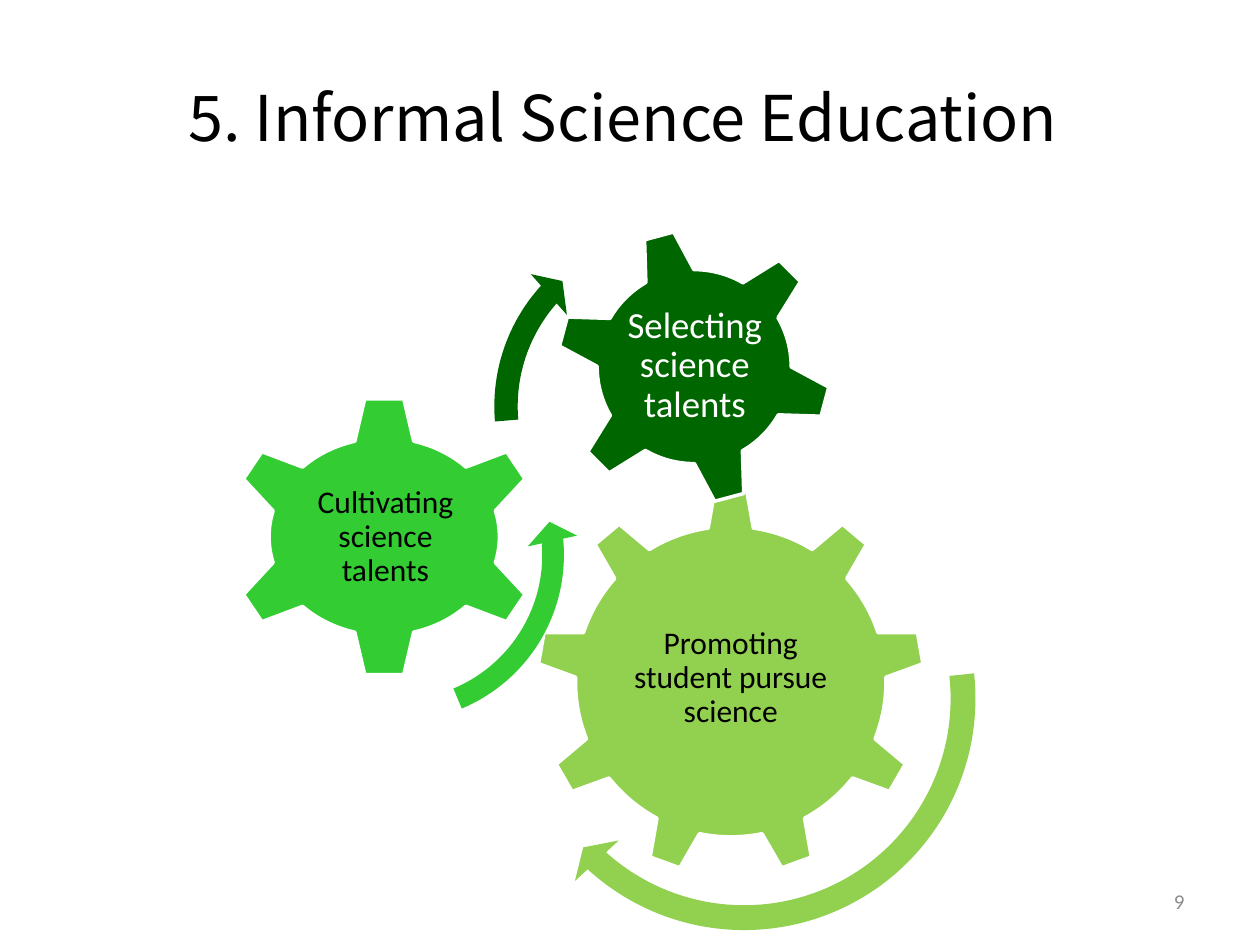
"""Build a title slide with three turning gears and their circular arrows."""
from dataclasses import dataclass

import pptx
import pptx.dml.color
import pptx.enum.shapes
import pptx.enum.text
import pptx.util

SHAPE = pptx.enum.shapes.MSO_SHAPE
ALIGN = pptx.enum.text.PP_ALIGN


@dataclass(frozen=True)
class Theme:
    """Colours, fonts and type sizes of the deck."""
    black: str = "000000"
    white: str = "FFFFFF"
    grey: str = "8C8C8C"
    light: str = "92D050"
    mid: str = "33CC33"
    dark: str = "006600"
    head_font: str = "Noto Sans CJK SC"
    body_font: str = "Calibri"
    title: int = 36
    large: int = 21
    label: int = 18
    number: int = 12
    outline: int = 2
    inset: float = 0.03


class Deck:
    """Draw on the current slide over a grid of 100 columns and 75 rows."""

    def __init__(self, theme):
        """Start an empty 10 by 7.5 inch presentation."""
        self.t = theme
        self.prs = pptx.Presentation()
        self.prs.slide_width = pptx.util.Inches(10)
        self.prs.slide_height = pptx.util.Inches(7.5)
        self.cell = self.prs.slide_width / 100

    def grid(self, *cells):
        """Turn grid cells into slide lengths."""
        return [round(c * self.cell) for c in cells]

    def colour(self, value):
        """Return the colour object of a hex value."""
        return pptx.dml.color.RGBColor.from_string(value)

    def add_text(self, sp, text, size, colour, font, align=ALIGN.CENTER):
        """Put one formatted run into the middle of a shape."""
        tf = sp.text_frame
        tf.word_wrap = True
        tf.auto_size = pptx.enum.text.MSO_AUTO_SIZE.NONE
        tf.vertical_anchor = pptx.enum.text.MSO_ANCHOR.MIDDLE
        p = tf.paragraphs[0]
        p.alignment = align
        r = p.add_run()
        r.text = text
        r.font.size = pptx.util.Pt(size)
        r.font.name = font
        r.font.color.rgb = self.colour(colour)
        return tf

    def slide(self, title, at):
        """Add a title-only slide with its title."""
        self.s = self.prs.slides.add_slide(self.prs.slide_layouts[5])
        sp = self.s.shapes.title
        sp.left, sp.top, sp.width, sp.height = self.grid(*at)
        self.add_text(sp, title, self.t.title, self.t.black, self.t.head_font)

    def number(self, text, at):
        """Add the slide number."""
        sp = self.s.shapes.add_textbox(*self.grid(*at))
        self.add_text(sp, text, self.t.number, self.t.grey, self.t.body_font, ALIGN.RIGHT)

    def group(self):
        """Open the group that holds the diagram."""
        self.diagram = self.s.shapes.add_group_shape().shapes

    def shape(self, kind, at, fill, rotation):
        """Add a filled, shadowless shape to the diagram."""
        sp = self.diagram.add_shape(kind, *self.grid(*at))
        sp.shadow.inherit = False
        sp.rotation = rotation
        sp.fill.solid()
        sp.fill.fore_color.rgb = self.colour(fill)
        return sp

    def gear(self, kind, at, fill, text, text_at, size, colour, rotation=0):
        """Add a gear and its upright label."""
        sp = self.shape(kind, at, fill, rotation)
        sp.line.color.rgb = self.colour(self.t.white)
        sp.line.width = pptx.util.Pt(self.t.outline)
        label = self.diagram.add_textbox(*self.grid(*text_at))
        tf = self.add_text(label, text, size, colour, self.t.body_font)
        tf.margin_left = tf.margin_right = pptx.util.Inches(self.t.inset)
        tf.margin_top = tf.margin_bottom = pptx.util.Inches(self.t.inset)
        tf.paragraphs[0].line_spacing = 0.9

    def arrow(self, kind, left, top, side, fill, adjust, rotation=0):
        """Add a circular arrow in a square frame."""
        sp = self.shape(kind, (left, top, side, side), fill, rotation)
        sp.line.fill.background()
        for i, value in enumerate(adjust):
            sp.adjustments[i] = value


def main():
    """Draw the slide and save it."""
    t = Theme()
    d = Deck(t)
    d.slide("5. Informal Science Education ", (5, 3, 90, 12.5))
    d.number("9", (71.7, 69.5, 23.3, 4))
    d.group()
    d.gear(SHAPE.GEAR_9, (42.6, 38.7, 30.8, 30.8), t.light,
           "Promoting student pursue science", (48.8, 45.9, 18.4, 15.9), t.label, t.black)
    d.gear(SHAPE.GEAR_6, (18, 31.4, 25, 22.4), t.mid,
           "Cultivating science talents", (24.1, 37.1, 13, 11.1), t.label, t.black)
    d.gear(SHAPE.GEAR_6, (44.1, 18.1, 22, 22), t.dark,
           "Selecting science talents", (49, 22.9, 12.3, 12.3), t.large, t.white, 345)
    d.arrow(SHAPE.CIRCULAR_ARROW, 39.3, 35.7, 39.5, t.light,
            (0.05, 2.99, 25.35, 158.22, 0.06), 90)
    d.arrow(SHAPE.LEFT_CIRCULAR_ARROW, 17.2, 29.7, 28.7, t.mid,
            (0.06, 4.3, 104.89, 148.38, 0.07), 180)
    d.arrow(SHAPE.CIRCULAR_ARROW, 38, 16.8, 30.9, t.dark,
            (0.06, 3.94, 133.14, 105.08, 0.07))
    d.prs.save("out.pptx")


if __name__ == "__main__":
    main()
